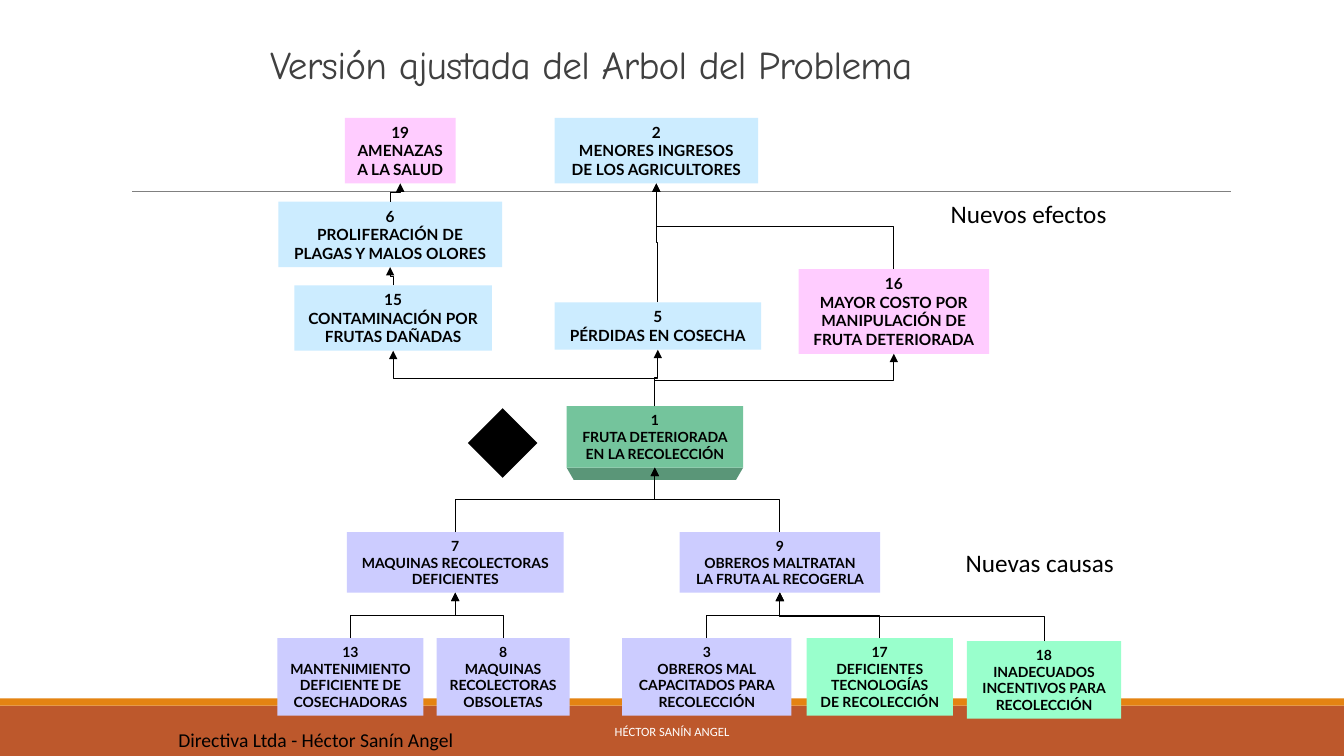
"""Draw the adjusted problem tree with its causes and effects."""
from dataclasses import dataclass

from lxml import etree
from pptx import Presentation
from pptx.dml.color import RGBColor
from pptx.enum.shapes import MSO_CONNECTOR, MSO_SHAPE
from pptx.enum.text import MSO_ANCHOR, MSO_AUTO_SIZE, PP_ALIGN
from pptx.oxml.ns import qn
from pptx.util import Inches, Pt

ELBOW, STRAIGHT = MSO_CONNECTOR.ELBOW, MSO_CONNECTOR.STRAIGHT
RECTANGLE, DIAMOND = MSO_SHAPE.RECTANGLE, MSO_SHAPE.DIAMOND
TOP, MIDDLE, BOTTOM = MSO_ANCHOR.TOP, MSO_ANCHOR.MIDDLE, MSO_ANCHOR.BOTTOM
LEFT, CENTER = PP_ALIGN.LEFT, PP_ALIGN.CENTER
GROW, FIXED = MSO_AUTO_SIZE.SHAPE_TO_FIT_TEXT, MSO_AUTO_SIZE.NONE
TOP_SIDE, BOTTOM_SIDE = 0, 2
BLUE, PINK, LILAC, MINT = "CCECFF", "FFCCFF", "CCCCFF", "99FFCC"
GREEN, DARK_GREEN, BLACK = "74C49C", "5A9678", "000000"


@dataclass
class Cell:
    number: int
    lines: str
    left: float
    top: float
    width: float
    height: float
    fill: str
    size: int


@dataclass
class Label:
    text: str
    left: float
    top: float
    width: float
    height: float
    size: int
    font: str = "Calibri"
    color: str = BLACK
    anchor: MSO_ANCHOR = TOP
    align: PP_ALIGN = LEFT
    wrap: bool = False


CELLS = [
    Cell(1, "FRUTA DETERIORADA\nEN LA RECOLECCIÓN", 5.62, 4.03, 1.75, 0.61, GREEN, 10),
    Cell(2, "MENORES INGRESOS\nDE LOS AGRICULTORES", 5.5, 1.17, 2.02, 0.65, BLUE, 11),
    Cell(5, "PÉRDIDAS EN COSECHA", 5.5, 3, 2.05, 0.47, BLUE, 11),
    Cell(15, "CONTAMINACIÓN POR\nFRUTAS DAÑADAS", 2.92, 2.83, 1.96, 0.65, BLUE, 11),
    Cell(6, "PROLIFERACIÓN DE\nPLAGAS Y MALOS OLORES", 2.76, 2, 2.22, 0.65, BLUE, 11),
    Cell(16, "MAYOR COSTO POR\nMANIPULACIÓN DE\nFRUTA DETERIORADA", 7.92, 2.67, 1.89, 0.84, PINK, 11),
    Cell(19, "AMENAZAS\nA LA SALUD", 3.42, 1.17, 1.1, 0.65, PINK, 11),
    Cell(7, "MAQUINAS RECOLECTORAS\nDEFICIENTES", 3.44, 5.28, 2.15, 0.6, LILAC, 10),
    Cell(9, "OBREROS MALTRATAN\nLA FRUTA AL RECOGERLA", 6.74, 5.28, 1.99, 0.6, LILAC, 10),
    Cell(13, "MANTENIMIENTO\nDEFICIENTE DE\nCOSECHADORAS", 2.75, 6.33, 1.45, 0.77, LILAC, 10),
    Cell(8, "MAQUINAS\nRECOLECTORAS\nOBSOLETAS", 4.33, 6.33, 1.32, 0.77, LILAC, 10),
    Cell(3, "OBREROS MAL\nCAPACITADOS PARA\nRECOLECCIÓN", 6.17, 6.33, 1.68, 0.77, LILAC, 10),
    Cell(17, "DEFICIENTES\nTECNOLOGÍAS\nDE RECOLECCIÓN", 8, 6.33, 1.45, 0.77, MINT, 10),
    Cell(18, "INADECUADOS\nINCENTIVOS PARA\nRECOLECCIÓN", 9.59, 6.36, 1.53, 0.77, MINT, 10),
]
CAUSE_TO_EFFECT = [
    (13, 7), (8, 7), (3, 9), (17, 9), (18, 9), (7, 1), (9, 1),
    (1, 15), (1, 5), (1, 16), (15, 6), (6, 19), (5, 2), (16, 2),
]
LABELS = [
    Label("Versión ajustada del Arbol del Problema", 2.58, 0, 8.5, 0.92, 28,
          "Comic Neue", "404040", BOTTOM, wrap=True),
    Label("HÉCTOR SANÍN ANGEL", 4.03, 7.06, 5.27, 0.4, 9,
          color="FFFFFF", anchor=MIDDLE, align=CENTER, wrap=True),
    Label("Directiva Ltda - Héctor Sanín Angel", 1.67, 7.17, 3.01, 0.34, 14),
    Label("Nuevas causas", 9.48, 5.38, 1.69, 0.4, 18),
    Label("Nuevos efectos", 9.33, 1.92, 1.77, 0.4, 18),
]


def rgb(color: str) -> RGBColor:
    """Turn a hex string into a colour."""
    return RGBColor.from_string(color)


def apply(target, values: dict) -> None:
    """Set every named attribute on the target."""
    for name, value in values.items():
        setattr(target, name, value)


def paint(shape, color: str) -> None:
    """Give a shape a flat fill without line or shadow."""
    shape.shadow.inherit = False
    shape.fill.solid()
    shape.fill.fore_color.rgb = rgb(color)
    shape.line.fill.background()


def add_block(page, kind, left: float, top: float, width: float, height: float, color: str):
    """Add a flat preset shape."""
    block = page.shapes.add_shape(kind, Inches(left), Inches(top), Inches(width), Inches(height))
    paint(block, color)
    return block


def write(box, text: str, align, frame_format: dict, font_format: dict, color: str) -> None:
    """Write one paragraph for each line of text."""
    frame = box.text_frame
    frame.text = text
    apply(frame, frame_format)
    for para in frame.paragraphs:
        para.alignment = align
        for span in para.runs:
            apply(span.font, font_format)
            span.font.color.rgb = rgb(color)


def add_cell(page, cell: Cell):
    """Add one numbered box of the tree."""
    box = add_block(page, RECTANGLE, cell.left, cell.top, cell.width, cell.height, cell.fill)
    write(box, f"{cell.number}\n{cell.lines}", CENTER,
          {"word_wrap": False, "auto_size": GROW, "vertical_anchor": MIDDLE},
          {"name": "Lato", "size": Pt(cell.size), "bold": True}, BLACK)
    return box


def add_label(page, label: Label):
    """Add free text."""
    box = page.shapes.add_textbox(Inches(label.left), Inches(label.top),
                                  Inches(label.width), Inches(label.height))
    write(box, label.text, label.align,
          {"word_wrap": label.wrap, "auto_size": FIXED if label.wrap else GROW,
           "vertical_anchor": label.anchor},
          {"name": label.font, "size": Pt(label.size)}, label.color)
    return box


def style_line(connector, color: str, width: float):
    """Set colour and width of a connector, without shadow, and return its line."""
    connector.line.color.rgb = rgb(color)
    connector.line.width = Pt(width)
    properties = connector._element.spPr
    etree.SubElement(properties, qn("a:effectLst"))
    return properties.find(qn("a:ln"))


def link_up(page, cause, effect) -> None:
    """Join a cause to the effect above it with a vertical elbow arrow."""
    start_x, end_x = cause.left + cause.width // 2, effect.left + effect.width // 2
    start_y, end_y = cause.top, effect.top + effect.height
    rise, run = start_y - end_y, abs(end_x - start_x)
    arrow = page.shapes.add_connector(ELBOW, start_x, start_y, end_x, end_y)
    arrow.begin_connect(cause, TOP_SIDE)
    arrow.end_connect(effect, BOTTOM_SIDE)
    apply(arrow, {"left": (start_x + end_x - rise) // 2, "top": (start_y + end_y - run) // 2,
                  "width": rise, "height": run})
    leftward = end_x < start_x
    frame = arrow._element.spPr.find(qn("a:xfrm"))
    frame.set("rot", str((90 if leftward else 270) * 60000))
    frame.set("flipH", "1" if leftward else "0")
    frame.set("flipV", "0")
    line = style_line(arrow, BLACK, 0.75)
    etree.SubElement(line, qn("a:tailEnd"), type="triangle")


def add_bevel(page, cell: Cell) -> None:
    """Add the dark lower edge of the central box."""
    bottom, inset, depth = cell.top + cell.height, 0.07, 0.12
    right = cell.left + cell.width
    builder = page.shapes.build_freeform(Inches(cell.left), Inches(bottom))
    corners = [(right, bottom), (right - inset, bottom + depth), (cell.left + inset, bottom + depth)]
    builder.add_line_segments([(Inches(x), Inches(y)) for x, y in corners])
    paint(builder.convert_to_shape(), DARK_GREEN)


def main() -> None:
    """Build and save the deck."""
    deck = Presentation()
    apply(deck, {"slide_width": Inches(13.33), "slide_height": Inches(7.5)})
    page = deck.slides.add_slide(deck.slide_layouts[6])
    add_block(page, RECTANGLE, 0, 7, 13.33, 0.5, "BD582C")
    add_block(page, RECTANGLE, 0, 6.93, 13.33, 0.07, "E48312")
    divider = page.shapes.add_connector(STRAIGHT, Inches(1.31), Inches(1.9), Inches(12.21), Inches(1.9))
    style_line(divider, "808080", 0.5)
    add_bevel(page, CELLS[0])
    boxes = {cell.number: add_cell(page, cell) for cell in CELLS}
    for cause, effect in CAUSE_TO_EFFECT:
        link_up(page, boxes[cause], boxes[effect])
    add_block(page, DIAMOND, 4.64, 4.05, 0.69, 0.69, BLACK)
    title = [add_label(page, label) for label in LABELS][0].text_frame.paragraphs[0]
    title.line_spacing = 0.85
    title.runs[0].font._element.set("spc", "-50")
    deck.save("out.pptx")


if __name__ == "__main__":
    main()
